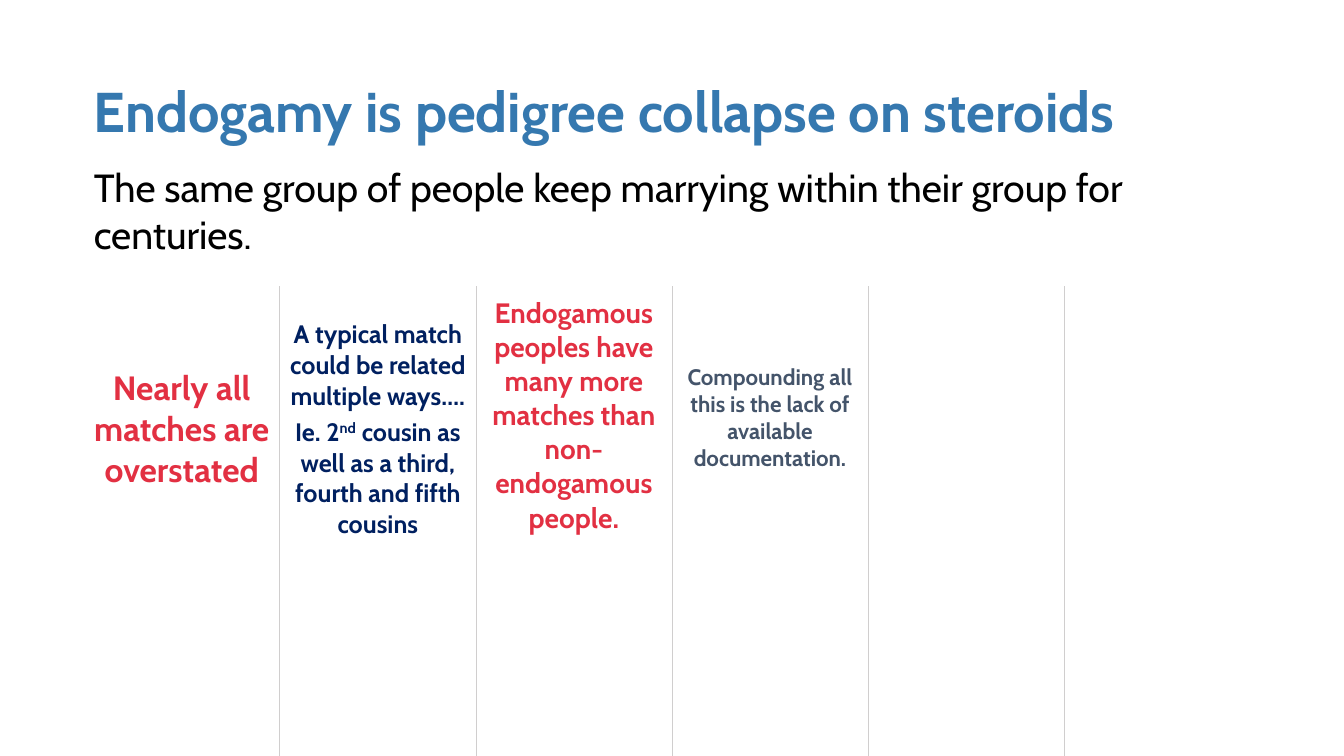
"""Build the slide on endogamy with its heading, lead sentence and column table."""
from lxml import etree
from pptx import Presentation
from pptx.dml.color import RGBColor
from pptx.enum import text as t
from pptx.oxml import ns
from pptx.util import Inches, Pt

COLORS = {"blue": "3578AF", "black": "000000", "red": "E23042",
          "navy": "002060", "slate": "44546A", "rule": "D0CECE"}


def write(paragraph, content, size, color, bold=False, align=t.PP_ALIGN.LEFT,
          before=0, spacing=1.0, raised=""):
    """Write content into a paragraph, raising one given piece of it."""
    paragraph.alignment = align
    paragraph.space_before = Pt(before)
    paragraph.line_spacing = spacing
    pieces = content.partition(raised) if raised else [content]
    for piece in pieces:
        run = paragraph.add_run()
        run.text = piece
        run.font.name = "Cabin"
        run.font.size = Pt(size)
        run.font.bold = bold
        run.font.color.rgb = RGBColor.from_string(COLORS[color])
        if raised and piece == raised:
            run.font._element.set("baseline", "30000")


def set_border(cell, side, visible):
    """Draw or clear one side of a table cell."""
    line = etree.SubElement(cell._tc.get_or_add_tcPr(), ns.qn(f"a:ln{side}"), w=str(Pt(0.5)))
    if visible:
        fill = etree.SubElement(line, ns.qn("a:solidFill"))
        etree.SubElement(fill, ns.qn("a:srgbClr"), val=COLORS["rule"])
    else:
        etree.SubElement(line, ns.qn("a:noFill"))


presentation = Presentation()
presentation.slide_width = Inches(13.33)
presentation.slide_height = Inches(7.5)
slide = presentation.slides.add_slide(presentation.slide_layouts[1])

title = slide.shapes.title
body = slide.placeholders[1]
for shape, top, width, height, anchor in [
    (title, 0.78, 11.58, 0.71, t.MSO_ANCHOR.MIDDLE),
    (body, 1.57, 11.67, 1.27, t.MSO_ANCHOR.TOP),
]:
    shape.left, shape.top = Inches(0.83), Inches(top)
    shape.width, shape.height = Inches(width), Inches(height)
    shape.text_frame.auto_size = t.MSO_AUTO_SIZE.NONE
    shape.text_frame.vertical_anchor = anchor
    shape.text_frame.word_wrap = True

write(title.text_frame.paragraphs[0], "Endogamy is pedigree collapse on steroids",
      size=40, color="blue", bold=True, spacing=0.9)
lead = body.text_frame.paragraphs[0]
lead_format = lead._p.get_or_add_pPr()
lead_format.set("marL", "0")
lead_format.set("indent", "0")
etree.SubElement(lead_format, ns.qn("a:buNone"))
write(lead, "The same group of people keep marrying within their group for centuries.",
      size=28, color="black")

row_heights = [0.71, 0.6, 1.9]
column_count = 6
table = slide.shapes.add_table(len(row_heights), column_count, Inches(0.83), Inches(2.84),
                               Inches(11.67), Inches(sum(row_heights))).table
table.first_row = False
table.horz_banding = False
for row, height in zip(table.rows, row_heights):
    row.height = Inches(height)
    for index, cell in enumerate(row.cells):
        set_border(cell, "L", index > 0)
        set_border(cell, "R", index < column_count - 1)
        set_border(cell, "T", False)
        set_border(cell, "B", False)
        cell.fill.background()

columns = [
    (["Nearly all matches are overstated"], 24, "red", 0.33),
    (["A typical match could be related multiple ways….",
      "Ie. 2nd cousin as well as a third, fourth and fifth cousins"], 18, "navy", 0.33),
    (["Endogamous peoples have many more matches than non-endogamous people."],
     20, "red", 0.05),
    (["Compounding all this is the lack of available documentation."], 16, "slate", 0.09),
]
for index, (lines, size, color, margin) in enumerate(columns):
    cell = table.cell(0, index)
    cell.vertical_anchor = t.MSO_ANCHOR.MIDDLE
    cell.margin_top = Inches(margin)
    for number, line in enumerate(lines):
        frame = cell.text_frame
        paragraph = frame.add_paragraph() if number else frame.paragraphs[0]
        write(paragraph, line, size=size, color=color, bold=True, align=t.PP_ALIGN.CENTER,
              before=3.6 if number else 0, raised="nd" if "2nd" in line else "")

presentation.save("out.pptx")
